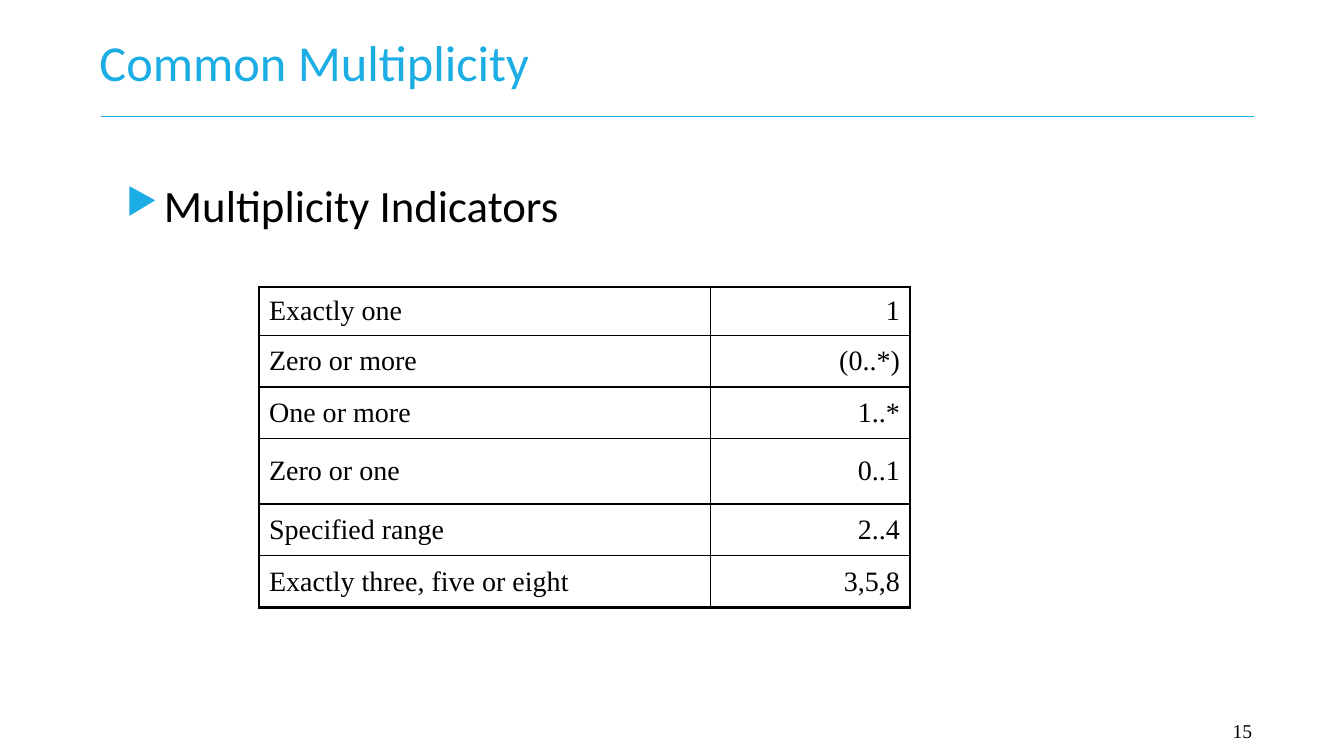
from dataclasses import dataclass

from lxml import etree
from pptx import Presentation
from pptx.dml.color import RGBColor
from pptx.enum.shapes import MSO_CONNECTOR
from pptx.enum.text import MSO_ANCHOR, PP_ALIGN
from pptx.oxml.ns import qn
from pptx.util import Pt

STRAIGHT = MSO_CONNECTOR.STRAIGHT
TOP, MIDDLE = MSO_ANCHOR.TOP, MSO_ANCHOR.MIDDLE
LEFT, RIGHT = PP_ALIGN.LEFT, PP_ALIGN.RIGHT
BLANK_LAYOUT = 6


@dataclass(frozen=True)
class Theme:
    """Colours, fonts, type sizes and line widths of the slide."""
    accent: str = "1CADE4"
    ink: str = "000000"
    sans: str = "Calibri"
    serif: str = "Times New Roman"
    title_size: int = 36
    body_size: int = 32
    table_size: int = 20
    number_size: int = 14
    thin: float = 1
    thick: float = 2.25


THEME = Theme()
MULTIPLICITIES = [
    ("Exactly one", "1", 34.5),
    ("Zero or more", "(0..*)", 37),
    ("One or more", "1..*", 37),
    ("Zero or one", "0..1", 46.5),
    ("Specified range", "2..4", 37),
    ("Exactly three, five or eight", "3,5,8", 37),
]
COLUMN_WIDTHS = (322.5, 142.5)


def write(frame, wording, family, size, colour, align=LEFT):
    """Put one styled paragraph into a text frame and return it."""
    frame.word_wrap = True
    paragraph = frame.paragraphs[0]
    paragraph.text = wording
    paragraph.alignment = align
    paragraph.font.name = family
    paragraph.font.size = Pt(size)
    paragraph.font.color.rgb = RGBColor.from_string(colour)
    return paragraph


def add_label(slide, box, anchor, *style):
    """Add a text box holding one paragraph and return the paragraph."""
    frame = slide.shapes.add_textbox(*map(Pt, box)).text_frame
    frame.vertical_anchor = anchor
    return write(frame, *style)


def add_heading(slide, box):
    """Add the title and the rule below it."""
    left, top, width, height = box
    add_label(slide, box, MIDDLE, "Common Multiplicity",
              THEME.sans, THEME.title_size, THEME.accent)
    rule_y = Pt(top + height + 11)
    rule = slide.shapes.add_connector(
        STRAIGHT, Pt(left + 8), rule_y, Pt(left + width - 15), rule_y)
    rule.line.color.rgb = RGBColor.from_string(THEME.accent)
    rule.line.width = Pt(THEME.thin)
    etree.SubElement(rule._element.spPr, qn("a:effectLst"))


def add_bullet(slide, box):
    """Add the bulleted line that introduces the table."""
    indicators = add_label(slide, box, TOP, "Multiplicity Indicators",
                           THEME.sans, THEME.body_size, THEME.ink)
    indicators.line_spacing = 0.9
    indicators.space_before = Pt(10)
    properties = indicators._p.get_or_add_pPr()
    properties.set("marL", str(Pt(27)))
    properties.set("indent", str(Pt(-27)))
    bullet_colour = etree.SubElement(properties, qn("a:buClr"))
    etree.SubElement(bullet_colour, qn("a:srgbClr"), val=THEME.accent)
    etree.SubElement(properties, qn("a:buSzPct"), val="80000")
    etree.SubElement(properties, qn("a:buChar"), char="▶")


def set_borders(cell, widths):
    """Draw the left, right, top and bottom borders of a cell."""
    properties = cell._tc.get_or_add_tcPr()
    for side, width in zip("LRTB", widths):
        border = etree.SubElement(properties, qn(f"a:ln{side}"), w=str(Pt(width)))
        fill = etree.SubElement(border, qn("a:solidFill"))
        etree.SubElement(fill, qn("a:srgbClr"), val=THEME.ink)


def add_multiplicity_table(slide, box):
    """Add the table of indicators with a thick outer frame."""
    row_count, column_count = len(MULTIPLICITIES), len(COLUMN_WIDTHS)
    table = slide.shapes.add_table(row_count, column_count, *map(Pt, box)).table
    table.first_row = table.horz_banding = False
    for column, width in zip(table.columns, COLUMN_WIDTHS):
        column.width = Pt(width)
    for row, (meaning, indicator, height) in enumerate(MULTIPLICITIES):
        table.rows[row].height = Pt(height)
        for column, (wording, align) in enumerate(((meaning, LEFT), (indicator, RIGHT))):
            cell = table.cell(row, column)
            outer = (column == 0, column == column_count - 1,
                     row == 0, row == row_count - 1)
            set_borders(cell, [THEME.thick if edge else THEME.thin for edge in outer])
            cell.fill.background()
            cell.vertical_anchor = MIDDLE
            write(cell.text_frame, wording, THEME.serif, THEME.table_size,
                  THEME.ink, align)


def add_page_number(slide, box):
    """Add the page number at the lower right."""
    add_label(slide, box, MIDDLE, "15", THEME.serif, THEME.number_size,
              THEME.ink, RIGHT)


def main():
    """Build and save the slide."""
    deck = Presentation()
    deck.slide_width, deck.slide_height = Pt(960), Pt(540)
    slide = deck.slides.add_slide(deck.slide_layouts[BLANK_LAYOUT])
    add_heading(slide, (64, 15, 847, 57))
    add_bullet(slide, (83, 128, 641, 63))
    add_multiplicity_table(slide, (185, 205, 465, 229))
    add_page_number(slide, (835, 507.5, 66.5, 29))
    deck.save("out.pptx")


if __name__ == "__main__":
    main()
